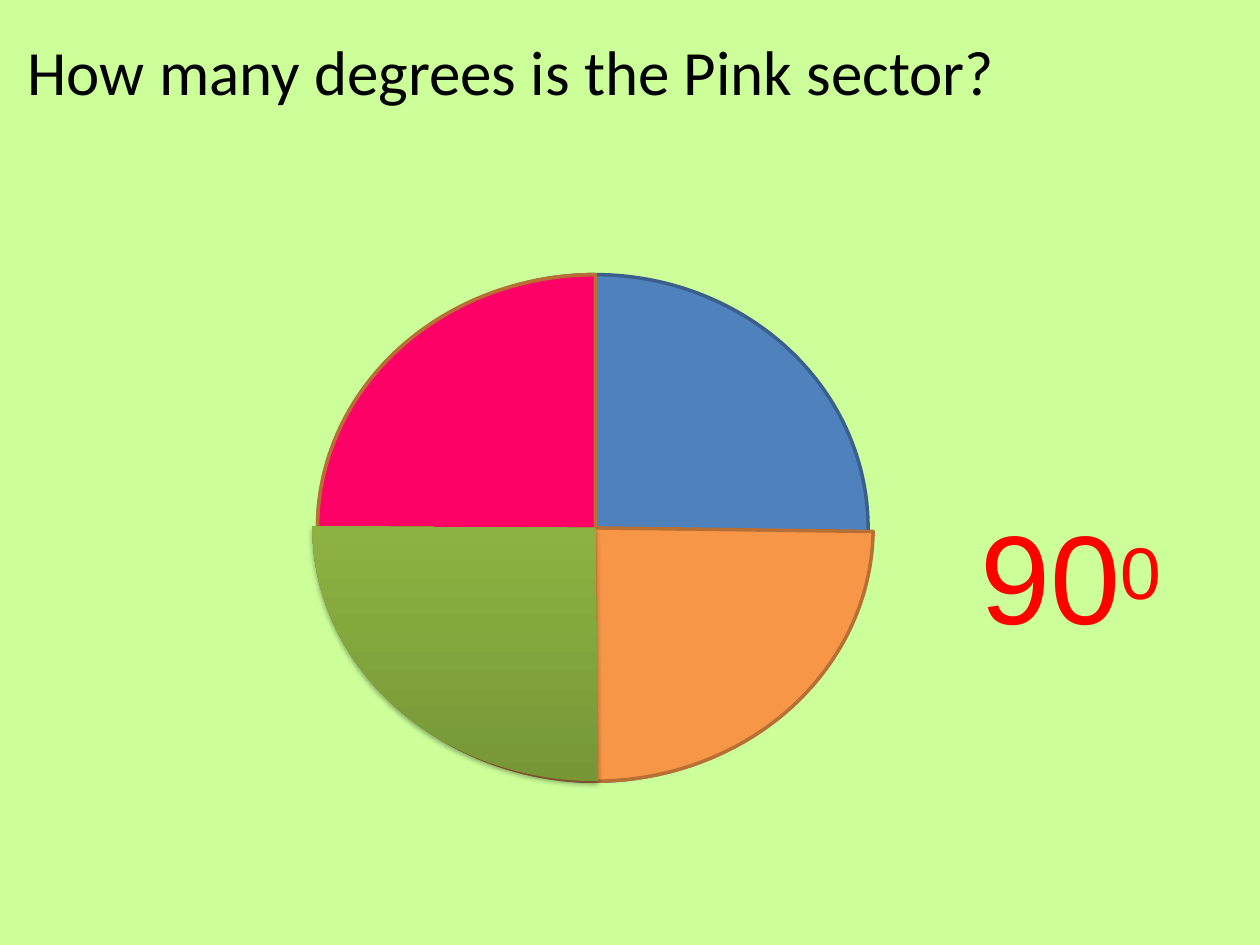
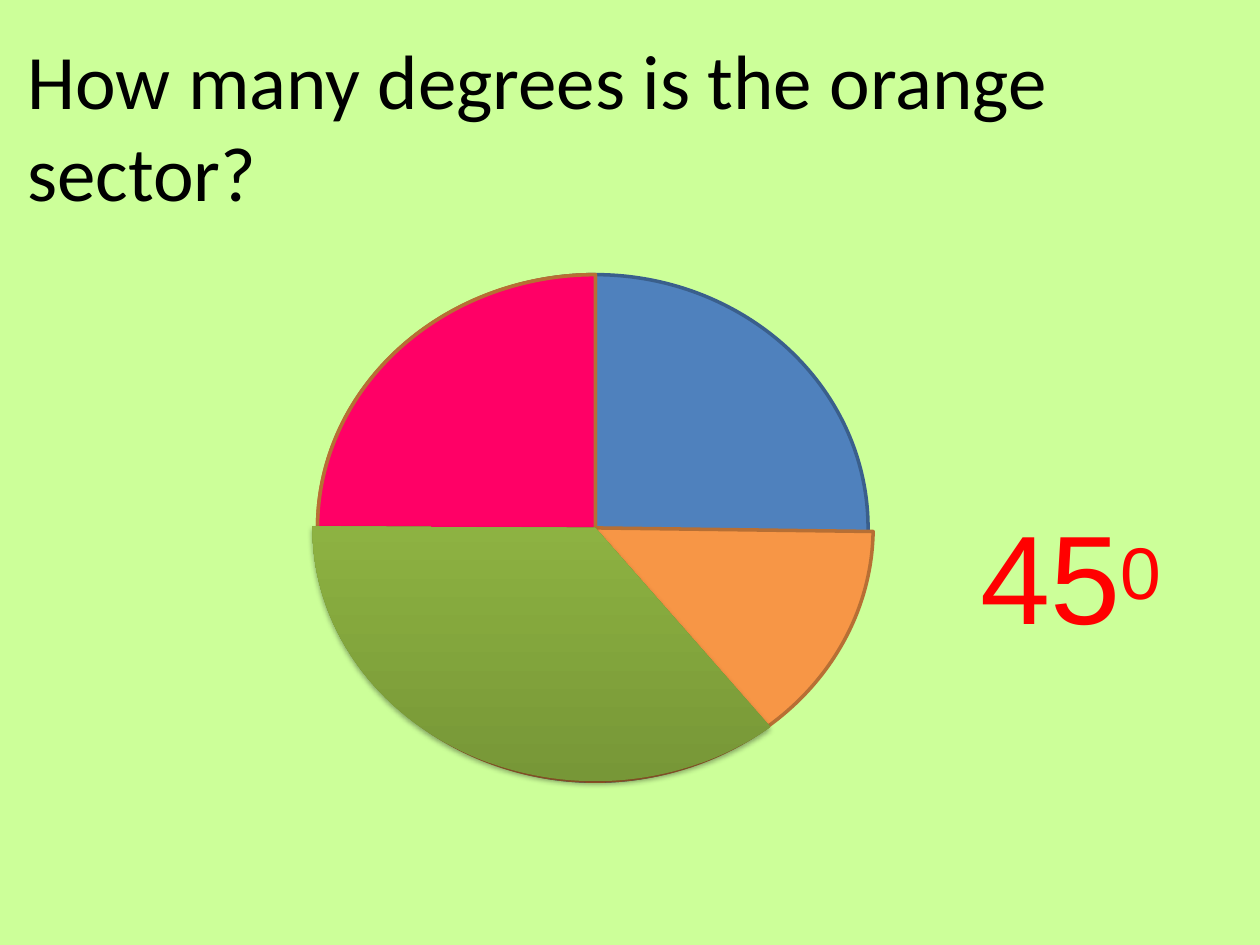
import pptx
import pptx.util
import pptx.dml.color
import pptx.enum.shapes
import pptx.enum.text
import pptx.oxml
import pptx.oxml.ns
from lxml import etree

Inches, Pt = pptx.util.Inches, pptx.util.Pt
RGBColor = pptx.dml.color.RGBColor
Shape = pptx.enum.shapes.MSO_SHAPE

# Content: question, its size, answer, angle where the green sector starts
QUESTIONS = [
    ("How many degrees is the Pink sector?", 36, "90", 89.43),
    ("How many degrees is the orange sector?", 44, "45", 48.66),
]

# Colours
BACKGROUND = RGBColor(0xCC, 0xFF, 0x99)
BLUE = RGBColor(0x4F, 0x81, 0xBD)
BLUE_EDGE = RGBColor(0x3A, 0x5F, 0x8C)
ORANGE = RGBColor(0xF7, 0x96, 0x46)
PINK = RGBColor(0xFF, 0x00, 0x66)
BROWN_EDGE = RGBColor(0xB7, 0x6F, 0x34)
BLACK = RGBColor(0, 0, 0)
RED = RGBColor(0xFF, 0, 0)
GREEN_STOPS = [(0, RGBColor(0x77, 0x97, 0x37)), (80, RGBColor(0x9B, 0xC3, 0x48)),
               (100, RGBColor(0x9D, 0xC7, 0x46))]

# Layout in inches: every part of the circle shares one centre line
CENTRE_X, CIRCLE_TOP, CIRCLE_HEIGHT = 4.725, 2.18, 4.02
DISC_WIDTH, SECTOR_WIDTH, GREEN_WIDTH = 4.33, 4.41, 4.49
QUESTION_AREA = (0.12, 0.21, 10.08, 0.71)
ANSWER_AREA = (7.68, 3.91, 1.73, 1.31)


def add_part(page, kind, width, angles=()):
    """Add a centred part of the circle; angles run clockwise in degrees."""
    part = page.shapes.add_shape(
        kind, Inches(CENTRE_X - width / 2), Inches(CIRCLE_TOP),
        Inches(width), Inches(CIRCLE_HEIGHT))
    part.shadow.inherit = False
    for index, angle in enumerate(angles):
        part.adjustments[index] = angle * 0.6  # 60000 units a degree
    return part


def paint(part, fill, edge):
    part.fill.solid()
    part.fill.fore_color.rgb = fill
    part.line.color.rgb = edge
    part.line.width = Pt(2)


def paint_green(part):
    """Three-stop gradient, dark at the foot, with a soft shadow below."""
    part.line.fill.background()
    part.fill.gradient()
    part.fill.gradient_angle = 90
    properties = part._element.spPr
    stops = properties.find(".//" + pptx.oxml.ns.qn("a:gsLst"))
    for stop in list(stops):
        stops.remove(stop)
    for share, colour in GREEN_STOPS:
        stop = etree.SubElement(stops, pptx.oxml.ns.qn("a:gs"), pos=str(share * 1000))
        etree.SubElement(stop, pptx.oxml.ns.qn("a:srgbClr"), val=str(colour))
    stops.getparent().find(pptx.oxml.ns.qn("a:lin")).set("ang", str(270 * 60000))
    effects = properties.find(pptx.oxml.ns.qn("a:effectLst"))
    shadow = etree.SubElement(
        effects, pptx.oxml.ns.qn("a:outerShdw"), blurRad="40000", dist="23000",
        dir=str(90 * 60000), rotWithShape="0")
    tint = etree.SubElement(shadow, pptx.oxml.ns.qn("a:srgbClr"), val=str(BLACK))
    etree.SubElement(tint, pptx.oxml.ns.qn("a:alpha"), val="35000")


def add_text(page, area, text, size, font, colour):
    box = page.shapes.add_textbox(*map(Inches, area))
    box.text_frame.word_wrap = True
    box.text_frame.auto_size = pptx.enum.text.MSO_AUTO_SIZE.SHAPE_TO_FIT_TEXT
    para = box.text_frame.paragraphs[0]
    para.add_run().text = text
    para.font.size = Pt(size)
    para.font.name = font
    para.font.color.rgb = colour
    return para


def add_question(deck, question, size, answer, green_start):
    page = deck.slides.add_slide(deck.slide_layouts[6])
    page.background.fill.solid()
    page.background.fill.fore_color.rgb = BACKGROUND

    # Circle, back to front: each sector covers part of the one before
    paint(add_part(page, Shape.OVAL, DISC_WIDTH), BLUE, BLUE_EDGE)
    for fill, start in [(ORANGE, 0.74), (PINK, 138.11)]:
        paint(add_part(page, Shape.PIE, SECTOR_WIDTH, (start, 270)), fill, BROWN_EDGE)
    paint_green(add_part(page, Shape.PIE, GREEN_WIDTH, (green_start, 180.32)))

    # Question and answer
    add_text(page, QUESTION_AREA, question, size, "Calibri", BLACK)
    para = add_text(page, ANSWER_AREA, answer, 72, "Arial", RED)
    degree = para.add_run()
    degree.text = "0"
    degree._r.get_or_add_rPr().set("baseline", "20000")


def main():
    deck = pptx.Presentation()
    deck.slide_width, deck.slide_height = Inches(10), Inches(7.5)
    for entry in QUESTIONS:
        add_question(deck, *entry)
    deck.save("out.pptx")


if __name__ == "__main__":
    main()
